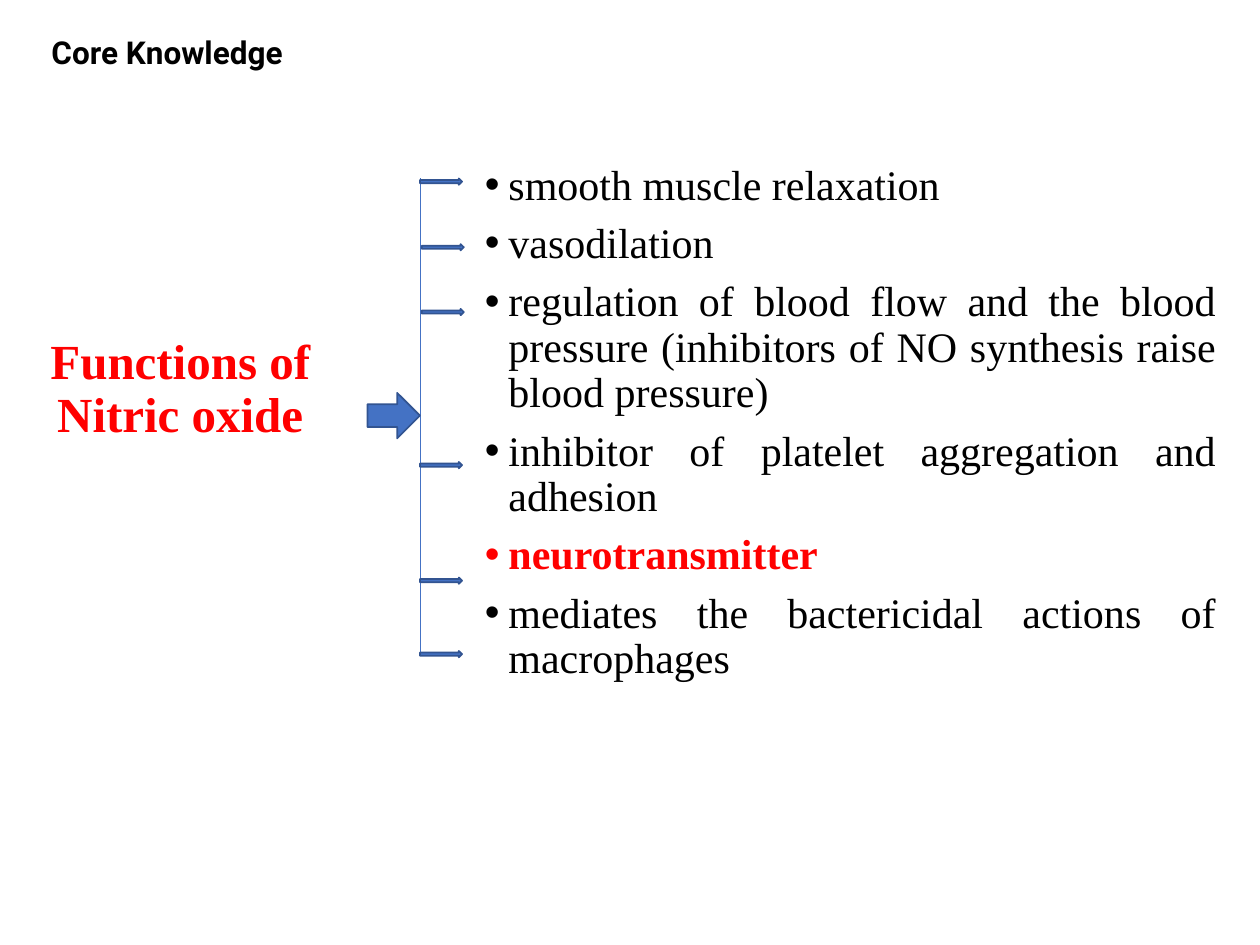
from lxml import etree
from pptx import Presentation
from pptx.dml.color import RGBColor
from pptx.enum import shapes, text
from pptx.oxml.ns import qn
from pptx.util import Pt

HUES = {"ink": "000000", "red": "FF0000", "blue": "4472C4", "edge": "325491"}
SERIF = "Times New Roman"
ALIGN = text.PP_ALIGN


class Deck:
    """Holds the style and the current slide, and draws each kind of element."""

    def __init__(self):
        self.file = Presentation()
        self.file.slide_width, self.file.slide_height = Pt(720), Pt(540)
        self.slide = self.file.slides.add_slide(self.file.slide_layouts[6])

    def hue(self, name):
        return RGBColor.from_string(HUES[name])

    def frame(self, box, wrap=True):
        frame = self.slide.shapes.add_textbox(*map(Pt, box)).text_frame
        frame.word_wrap = wrap
        return frame

    def style(self, para, size, face, hue, bold, align):
        para.alignment, para.line_spacing = align, 0.9
        font = para.font
        font.size, font.name, font.bold = Pt(size), face, bold
        font.color.rgb = self.hue(hue)

    def label(self, box, words, size, face, hue, wrap=True):
        para = self.frame(box, wrap).paragraphs[0]
        para.text = words
        self.style(para, size, face, hue, True, ALIGN.CENTER)

    def bullets(self, box, items, key):
        frame = self.frame(box)
        for i, item in enumerate(items):
            para = frame.add_paragraph() if i else frame.paragraphs[0]
            para.text = item
            if i:
                para.space_before = Pt(7.5)
            para.line_spacing = 0.9
            props = para._p.get_or_add_pPr()
            props.set("marL", str(Pt(13.5)))
            props.set("indent", str(-Pt(13.5)))
            etree.SubElement(props, qn("a:buFont")).set("typeface", "Arial")
            etree.SubElement(props, qn("a:buChar")).set("char", "•")
            hot = item == key
            self.style(para, 24, SERIF, "red" if hot else "ink", hot, ALIGN.JUSTIFY)

    def arrow(self, *box):
        kind = shapes.MSO_SHAPE.RIGHT_ARROW
        shape = self.slide.shapes.add_shape(kind, *map(Pt, box))
        shape.shadow.inherit = False
        shape.fill.solid()
        shape.fill.fore_color.rgb = self.hue("blue")
        shape.line.color.rgb = self.hue("edge")
        shape.line.width = Pt(1)

    def line(self, *ends):
        kind = shapes.MSO_CONNECTOR.STRAIGHT
        line = self.slide.shapes.add_connector(kind, *map(Pt, ends))
        line.line.color.rgb = self.hue("blue")
        line.line.width = Pt(0.5)
        etree.SubElement(line._element.spPr, qn("a:effectLst"))


def main():
    deck = Deck()
    items = [
        "smooth muscle relaxation",
        "vasodilation",
        "regulation of blood flow and the blood pressure "
        "(inhibitors of NO synthesis raise blood pressure)",
        "inhibitor of platelet aggregation and adhesion",
        "neurotransmitter",
        "mediates the bactericidal actions of macrophages",
    ]
    deck.bullets((270, 90, 432, 486 - 36), items, "neurotransmitter")
    deck.label((-5, 189, 216, 70), "Functions of Nitric oxide", 28, SERIF, "red")
    stem = 240
    deck.line(stem, 102, stem, 374)
    for top, shift in [(102, 0), (139.5, 1), (176.5, 1), (264, 0), (330, 0), (372, 0)]:
        deck.arrow(stem + shift, top, 24, 3.6)
    deck.arrow(210, 224.5, 30, 26)
    deck.label((18, 18, 155, 27), "Core Knowledge", 18, "Roboto", "ink", False)
    deck.file.save("out.pptx")


if __name__ == "__main__":
    main()
